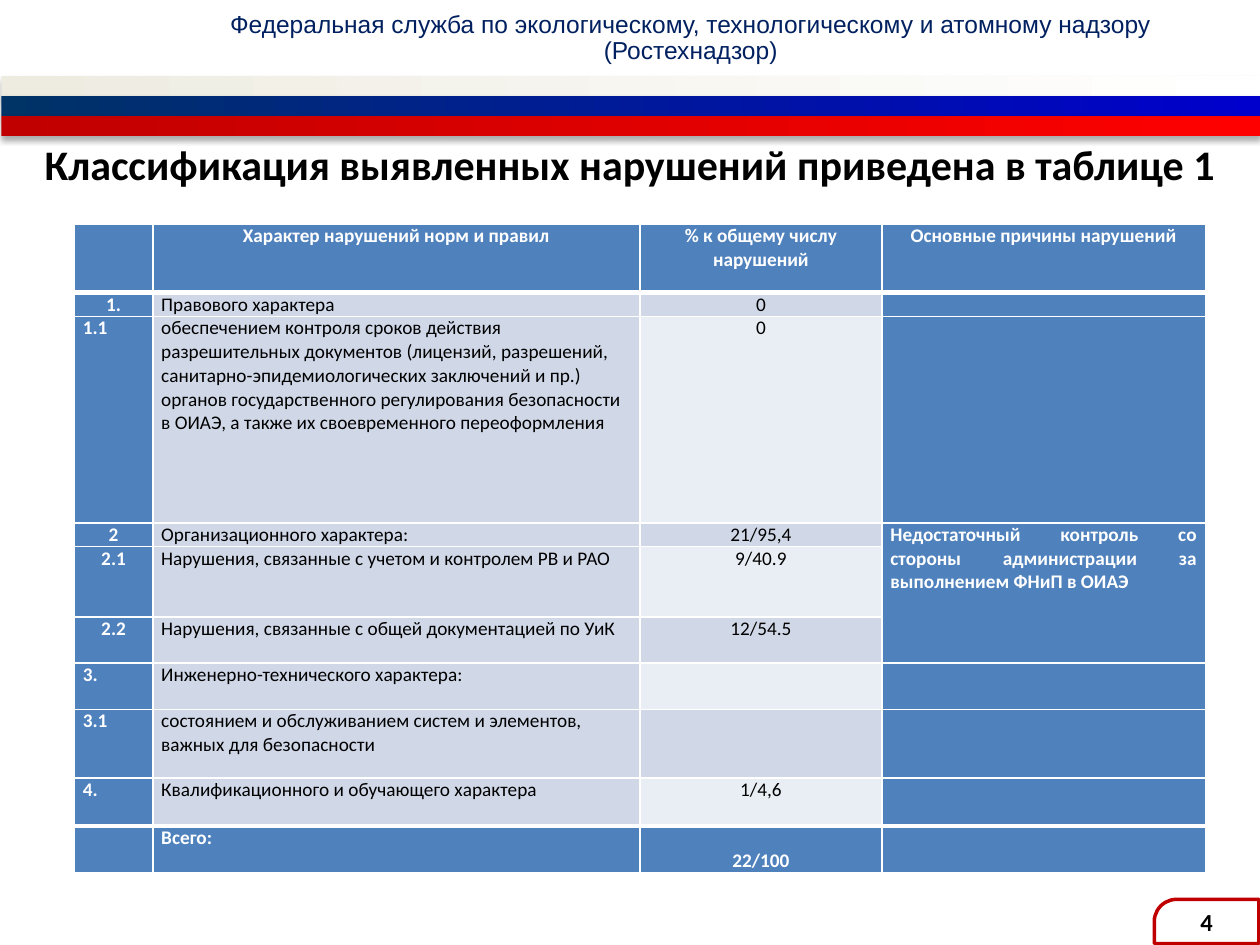
from lxml import etree
from pptx import Presentation
from pptx.dml.color import RGBColor
from pptx.enum import shapes, text
from pptx.oxml.ns import qn
from pptx.util import Cm, Pt

WHITE = RGBColor(0xFF, 0xFF, 0xFF)
BLACK = RGBColor(0, 0, 0)
NAVY = RGBColor(0x00, 0x20, 0x60)
CREAM = RGBColor(0xEE, 0xEC, 0xE1)
DARK_BLUE = RGBColor(0x00, 0x33, 0x66)
BRIGHT_BLUE = RGBColor(0x00, 0x00, 0xCC)
DARK_RED = RGBColor(0xC0, 0x00, 0x00)
RED = RGBColor(0xFF, 0x00, 0x00)
TABLE_BLUE = RGBColor(0x4F, 0x81, 0xBD)
BAND_DARK = RGBColor(0xD0, 0xD8, 0xE8)
BAND_LIGHT = RGBColor(0xE9, 0xED, 0xF4)

LEFT, CENTER, JUSTIFY = text.PP_ALIGN.LEFT, text.PP_ALIGN.CENTER, text.PP_ALIGN.JUSTIFY
TOP, MIDDLE, BOTTOM = text.MSO_ANCHOR.TOP, text.MSO_ANCHOR.MIDDLE, text.MSO_ANCHOR.BOTTOM

COLUMN_WIDTHS = [1.58, 9.82, 4.88, 6.52]
ROW_HEIGHTS = [1.38, 0.48, 4.16, 0.48, 1.42, 0.93, 0.93, 1.39, 0.96, 0.94]
ROWS = [
    ("", "Характер нарушений норм и правил", "% к общему числу нарушений",
     "Основные причины нарушений"),
    ("1.", "Правового характера", "0", ""),
    ("1.1", "обеспечением контроля сроков действия разрешительных документов "
     "(лицензий, разрешений, санитарно-эпидемиологических заключений и пр.) "
     "органов государственного регулирования безопасности в ОИАЭ, а также их "
     "своевременного переоформления", "0", ""),
    ("2", "Организационного характера:", "21/95,4",
     "Недостаточный контроль со стороны администрации за выполнением ФНиП в ОИАЭ"),
    ("2.1", "Нарушения, связанные с учетом и контролем РВ и РАО", "9/40.9", ""),
    ("2.2", "Нарушения, связанные с общей документацией по УиК", "12/54.5", ""),
    ("3.", "Инженерно-технического характера:", "", ""),
    ("3.1", "состоянием и обслуживанием систем и элементов, важных для безопасности", "", ""),
    ("4.", "Квалификационного и обучающего характера", "1/4,6", ""),
    ("", "Всего:", "22/100", ""),
]
CENTERED_LABELS = {"1.", "2", "2.1", "2.2"}
LAST_ROW = len(ROWS) - 1


def write_text(frame, lines, size, color, font="Calibri", bold=False, align=CENTER, spacing=None):
    for index, line in enumerate(lines):
        paragraph = frame.paragraphs[0] if index == 0 else frame.add_paragraph()
        paragraph.alignment = align
        if spacing:
            paragraph.line_spacing = Pt(spacing)
        if not line:
            # An empty paragraph takes its height from its end mark
            etree.SubElement(paragraph._p, qn("a:endParaRPr"), sz=str(size * 100))
            continue
        run = paragraph.add_run()
        run.text = line
        run.font.name, run.font.size, run.font.bold = font, Pt(size), bold
        run.font.color.rgb = color


def add_text_box(slide, left, top, width, height, lines, anchor=MIDDLE, margin=0.13, **style):
    frame = slide.shapes.add_textbox(Cm(left), Cm(top), Cm(width), Cm(height)).text_frame
    frame.word_wrap = True
    frame.vertical_anchor = anchor
    frame.margin_top = frame.margin_bottom = Cm(margin)
    write_text(frame, lines, **style)


def add_shadow(shape):
    effects = etree.SubElement(shape._element.spPr, qn("a:effectLst"))
    shadow = etree.SubElement(effects, qn("a:outerShdw"), blurRad=str(Pt(3.5)),
                              dist=str(Pt(2.2)), dir="5400000", rotWithShape="0")
    color = etree.SubElement(shadow, qn("a:srgbClr"), val="000000")
    etree.SubElement(color, qn("a:alpha"), val="32000")


def add_header(slide, left, top, width):
    add_text_box(slide, left + 2.46, top, width - 2.5, 1.1,
                 ["Федеральная служба по экологическому, технологическому и атомному надзору",
                  "(Ростехнадзор)"],
                 anchor=TOP, margin=0, size=14, color=NAVY, font="Arial", spacing=15)
    stripe_height = 0.4
    stripes = [(CREAM, WHITE), (DARK_BLUE, BRIGHT_BLUE), (DARK_RED, RED)]
    for index, colors in enumerate(stripes):
        stripe = slide.shapes.add_shape(
            shapes.MSO_SHAPE.RECTANGLE, Cm(left), Cm(top + 1.29 + index * stripe_height),
            Cm(width), Cm(stripe_height))
        stripe.fill.gradient()
        stripe.fill.gradient_angle = 0
        for stop, color in zip(stripe.fill.gradient_stops, colors):
            stop.color.rgb = color
        stripe.line.fill.background()
        add_shadow(stripe)


def add_page_number(slide, left, top, width, height, number):
    # The tab stands on its side, so its rounded corner comes out at top left
    tab = slide.shapes.add_shape(
        shapes.MSO_SHAPE.ROUND_1_RECTANGLE, Cm(left + (width - height) / 2),
        Cm(top + (height - width) / 2), Cm(height), Cm(width))
    tab.rotation = 270
    tab.adjustments[0] = 0.5
    tab.fill.background()
    tab.line.color.rgb = DARK_RED
    tab.line.width = Pt(2)
    tab.shadow.inherit = False
    add_text_box(slide, left, top, width, height, [number], size=14, color=BLACK, bold=True)


def set_borders(cell, **widths):
    properties = cell._tc.get_or_add_tcPr()
    for position, side in enumerate("LRTB"):
        line = etree.Element(qn(f"a:ln{side}"), w=str(Pt(widths.get(side, 1))))
        fill = etree.SubElement(line, qn("a:solidFill"))
        etree.SubElement(fill, qn("a:srgbClr"), val=str(WHITE))
        properties.insert(position, line)


def cell_alignment(row, column):
    if row == 0 or column == 2:
        return CENTER
    if column == 0:
        return CENTER if ROWS[row][0] in CENTERED_LABELS else LEFT
    return JUSTIFY if column == 3 else LEFT


def cell_fill(row, column):
    if row in (0, LAST_ROW) or column in (0, 3):
        return TABLE_BLUE
    return BAND_DARK if column == 1 or row % 2 else BAND_LIGHT


def add_violations_table(slide, left, top):
    table = slide.shapes.add_table(
        len(ROWS), len(COLUMN_WIDTHS), Cm(left), Cm(top),
        Cm(sum(COLUMN_WIDTHS)), Cm(sum(ROW_HEIGHTS))).table
    for column, width in zip(table.columns, COLUMN_WIDTHS):
        column.width = Cm(width)
    for row, height in zip(table.rows, ROW_HEIGHTS):
        row.height = Cm(height)
    for row, values in enumerate(ROWS):
        for column, value in enumerate(values):
            cell = table.cell(row, column)
            cell.margin_left = cell.margin_right = Cm(0.17)
            cell.margin_top = cell.margin_bottom = 0
            cell.vertical_anchor = BOTTOM if (row, column) == (LAST_ROW, 2) else TOP
            fill = cell_fill(row, column)
            cell.fill.solid()
            cell.fill.fore_color.rgb = fill
            set_borders(cell, T=3 if row in (1, LAST_ROW) else 1,
                        B=3 if row in (0, LAST_ROW - 1) else 1)
            strong = fill == TABLE_BLUE
            write_text(cell.text_frame, [value], size=11, color=WHITE if strong else BLACK,
                       bold=strong, align=cell_alignment(row, column))
    table.cell(3, 3).merge(table.cell(5, 3))


def main():
    presentation = Presentation()
    presentation.slide_width, presentation.slide_height = Cm(25.4), Cm(19.05)
    slide = presentation.slides.add_slide(presentation.slide_layouts[6])
    add_header(slide, 0.03, 0.25, 25.37)
    add_text_box(slide, 0, 2.62, 25.4, 1.37,
                 ["Классификация выявленных нарушений приведена в таблице 1"],
                 size=24, color=BLACK, bold=True)
    add_violations_table(slide, 1.5, 4.52)
    add_page_number(slide, 23.27, 18.13, 2.11, 0.89, "4")
    presentation.save("out.pptx")


if __name__ == "__main__":
    main()
